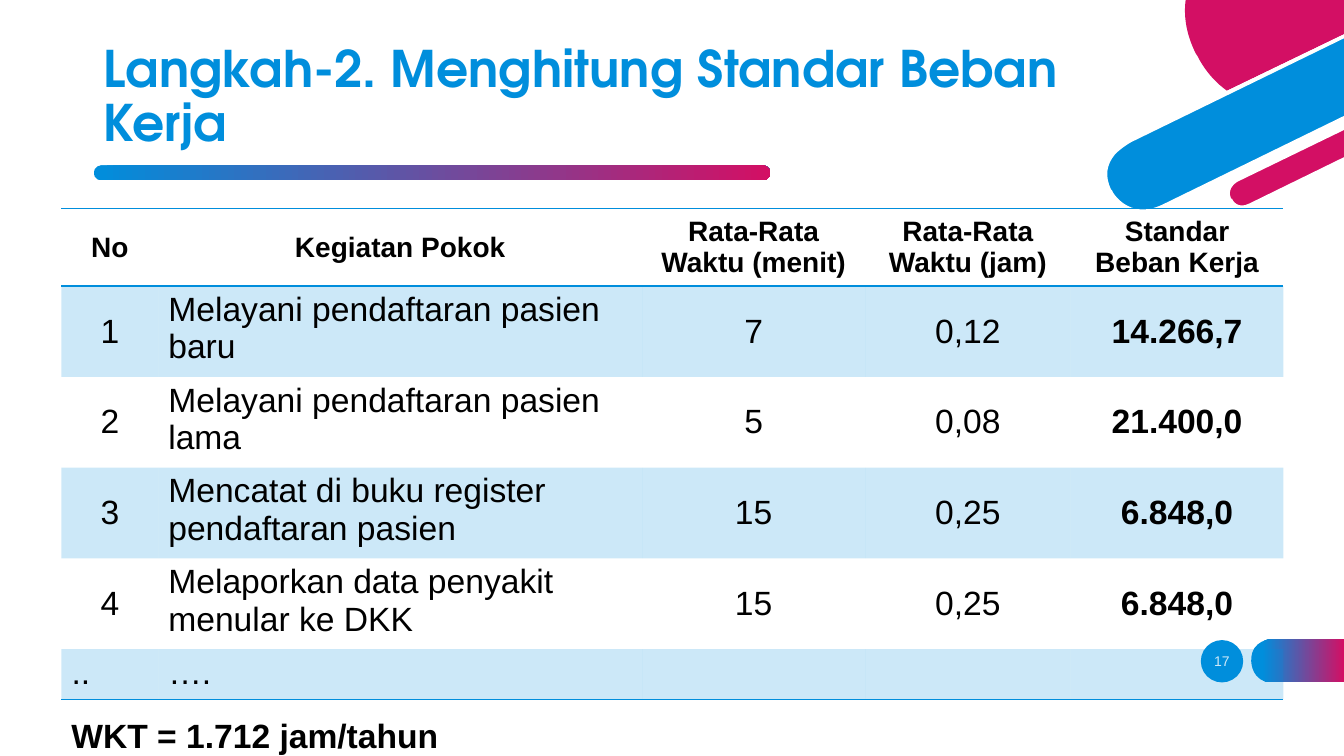
from lxml.etree import SubElement
from pptx import Presentation
from pptx.dml.color import RGBColor
from pptx.enum.shapes import MSO_SHAPE
from pptx.enum.text import MSO_ANCHOR, MSO_AUTO_SIZE, PP_ALIGN
from pptx.oxml import parse_xml
from pptx.oxml.ns import nsdecls, qn
from pptx.util import Inches, Pt

BLUE, PINK, WHITE, BLACK = "008EDC", "D30F64", "FFFFFF", "000000"
NO_STYLE = "{2D5ABB26-0587-4C30-8999-92F81FD0307C}"
UNITS = 1000  # outline units per inch

# Corner ribbons: a pair is a straight step, six numbers are a Bézier step
RIBBONS = [
    (WHITE, [(13.33, 0.81), (13.06, 0.94), (12.74, 1.1, 12.44, 1.08, 12.19, 0.89),
             (11.99, 0.74, 11.89, 0.55, 11.89, 0.55), (11.88, 0.52),
             (11.79, 0.34, 11.75, 0.16, 11.78, 0), (11.74, 0),
             (11.71, 0.17, 11.75, 0.35, 11.84, 0.54), (11.86, 0.57),
             (11.86, 0.58, 11.96, 0.77, 12.16, 0.92),
             (12.28, 1.01, 12.44, 1.09, 12.65, 1.09),
             (12.77, 1.09, 12.91, 1.06, 13.08, 0.98), (13.33, 0.86)]),
    (BLUE, [(11.21, 1.39), (11.21, 1.39, 10.85, 1.57, 11.01, 1.89), (11.01, 1.9),
            (11.01, 1.9, 11.17, 2.22, 11.54, 2.04), (13.33, 1.17), (13.33, 0.36)]),
    (PINK, [(11.88, 0.56), (11.88, 0.56, 11.97, 0.76, 12.17, 0.9), (13.33, 0.34),
            (13.33, 0), (11.76, 0), (11.74, 0.15, 11.76, 0.33, 11.86, 0.53)]),
    (PINK, [(13.33, 1.26), (12.27, 1.78), (12.27, 1.78, 12.13, 1.85, 12.2, 1.97),
            (12.2, 1.98), (12.2, 1.98, 12.26, 2.11, 12.4, 2.04), (13.33, 1.58)]),
    (WHITE, [(12.39, 2.02), (12.27, 2.08, 12.22, 1.98, 12.22, 1.97), (12.21, 1.97),
             (12.16, 1.86, 12.28, 1.8, 12.28, 1.8), (13.33, 1.29), (13.33, 1.24),
             (12.26, 1.76), (12.26, 1.76, 12.19, 1.8, 12.17, 1.87),
             (12.15, 1.91, 12.16, 1.95, 12.18, 1.99),
             (12.2, 2.03, 12.25, 2.08, 12.32, 2.08),
             (12.35, 2.08, 12.38, 2.08, 12.41, 2.06), (13.33, 1.61), (13.33, 1.56)]),
    (WHITE, [(11.53, 2.03), (11.19, 2.19, 11.03, 1.9, 11.03, 1.89), (11.02, 1.88),
             (10.96, 1.75, 10.97, 1.64, 11.06, 1.53),
             (11.13, 1.46, 11.22, 1.41, 11.22, 1.41), (13.33, 0.38), (13.33, 0.34),
             (11.2, 1.37), (11.19, 1.38, 11.02, 1.46, 10.96, 1.63),
             (10.93, 1.71, 10.94, 1.8, 10.99, 1.9), (10.99, 1.91),
             (10.99, 1.91, 11.1, 2.12, 11.33, 2.12),
             (11.39, 2.12, 11.46, 2.1, 11.54, 2.06), (13.33, 1.19), (13.33, 1.15)]),
]
PAGE_TAB = [(12.62, 6.77), (13.33, 6.77), (13.33, 6.34), (12.62, 6.34),
            (12.62, 6.34, 12.41, 6.34, 12.41, 6.55), (12.41, 6.56),
            (12.41, 6.56, 12.41, 6.77, 12.62, 6.77)]

COLUMNS = [0.96, 4.8, 2.21, 2.04, 2.11]
ROW_HEIGHT = 0.41
ROWS = [
    ["No", "Kegiatan Pokok", "Rata-Rata Waktu (menit)", "Rata-Rata Waktu (jam)",
     "Standar Beban Kerja"],
    ["1", "Melayani pendaftaran pasien baru", "7", "0,12", "14.266,7"],
    ["2", "Melayani pendaftaran pasien lama", "5", "0,08", "21.400,0"],
    ["3", "Mencatat di buku register pendaftaran pasien", "15", "0,25", "6.848,0"],
    ["4", "Melaporkan data penyakit menular ke DKK", "15", "0,25", "6.848,0"],
    ["..", "….", "", "", ""],
]


def rgb(color):
    return RGBColor.from_string(color)


def set_gradient(fill, start=0):
    fill.gradient()
    fill.gradient_angle = 0
    for stop, color, position in zip(fill.gradient_stops, (BLUE, PINK), (start, 1)):
        stop.color.rgb = rgb(color)
        stop.position = position


def paint(sp, color=None, start=0):
    """Fill with a colour, or with the blue-to-pink gradient if none is given."""
    sp.shadow.inherit = False
    sp.line.fill.background()
    if color:
        sp.fill.solid()
        sp.fill.fore_color.rgb = rgb(color)
    else:
        set_gradient(sp.fill, start)


def write(tf, text, color=BLACK, align=PP_ALIGN.LEFT, **font):
    p = tf.paragraphs[0]
    p.alignment = align
    r = p.add_run()
    r.text = text
    for name, value in {"name": "Arial", "bold": False, **font}.items():
        setattr(r.font, name, value)
    if color:
        r.font.color.rgb = rgb(color)
    return r


def add_text(s, box, text, anchor=MSO_ANCHOR.TOP, **format_values):
    tf = s.shapes.add_textbox(*map(Inches, box)).text_frame
    tf.word_wrap = True
    tf.vertical_anchor = anchor
    write(tf, text, **format_values)


def add_outline(s, steps, color=None, start=0):
    ends = [tuple(round(v * UNITS) for v in step[-2:]) for step in steps]
    left, top = (min(values) for values in zip(*ends))
    builder = s.shapes.build_freeform(*ends[0], scale=Inches(1) / UNITS)
    builder.add_line_segments(ends[1:], close=True)
    sp = builder.convert_to_shape()
    # Turn the straight segments of Bézier steps into curves
    segments = list(sp._element.iter(qn("a:lnTo")))
    for segment, step in zip(segments, steps[1:]):
        if len(step) == 6:
            segment.tag = qn("a:cubicBezTo")
            for i, (x, y) in enumerate((step[:2], step[2:4])):
                segment.insert(i, parse_xml(
                    f'<a:pt {nsdecls("a")} x="{round(x * UNITS) - left}"'
                    f' y="{round(y * UNITS) - top}"/>'))
    paint(sp, color, start)


def add_preset(s, shape_type, box, color=None):
    sp = s.shapes.add_shape(shape_type, *map(Inches, box))
    paint(sp, color)
    return sp


def add_title(s, text):
    title = s.shapes.title
    title.left, title.top, title.width, title.height = map(
        Inches, (0.93, 0.46, 9.9, 1.03))
    tf = title.text_frame
    tf.auto_size = MSO_AUTO_SIZE.NONE
    tf.vertical_anchor = MSO_ANCHOR.MIDDLE
    r = write(tf, text, None, name="TeX Gyre Adventor", size=Pt(36), bold=True)
    tf.paragraphs[0].line_spacing = 0.9
    set_gradient(r.font.fill)


def add_border(cell, side):
    cell._tc.get_or_add_tcPr().insert(0, parse_xml(
        f'<a:{side} {nsdecls("a")} w="12700"><a:solidFill><a:srgbClr val="{BLUE}"/>'
        f'</a:solidFill></a:{side}>'))


def tint(cell):
    cell.fill.solid()
    cell.fill.fore_color.rgb = rgb(BLUE)
    color = cell._tc.tcPr.find(".//" + qn("a:srgbClr"))
    SubElement(color, qn("a:alpha"), val="20000")


def add_workload_table(s):
    last = len(ROWS) - 1
    frame = s.shapes.add_table(len(ROWS), len(COLUMNS), *map(
        Inches, (0.61, 2.07, sum(COLUMNS), 4.87)))
    table = frame.table
    table.first_row = table.horz_banding = False
    table._tbl.tblPr.find(qn("a:tableStyleId")).text = NO_STYLE
    for column, width in zip(table.columns, COLUMNS):
        column.width = Inches(width)
    for i, row in enumerate(ROWS):
        table.rows[i].height = Inches(ROW_HEIGHT)  # rows grow with their text
        for j, text in enumerate(row):
            cell = table.cell(i, j)
            centred = i == 0 or (j != 1 and i != last)
            if centred:
                cell.vertical_anchor = MSO_ANCHOR.MIDDLE
            if text:
                write(cell.text_frame, text, size=Pt(24 if i else 20),
                      bold=i == 0 or j == 4,
                      align=PP_ALIGN.CENTER if centred else PP_ALIGN.LEFT)
            if i % 2:
                tint(cell)
            else:
                cell.fill.background()
            if i in (0, last):
                add_border(cell, "lnB")
            if i == 0:
                add_border(cell, "lnT")
    frame.height = Inches(4.87)


def main():
    prs = Presentation()
    prs.slide_width, prs.slide_height = Inches(13.33), Inches(7.5)
    s = prs.slides.add_slide(prs.slide_layouts[5])

    # Decoration
    add_preset(s, MSO_SHAPE.OVAL, (11.91, 6.35, 0.42, 0.42), BLUE)
    add_outline(s, PAGE_TAB, start=0.12)
    for color, steps in RIBBONS:
        add_outline(s, steps, color)
    bar = add_preset(s, MSO_SHAPE.ROUNDED_RECTANGLE, (0.93, 1.64, 6.71, 0.15))
    bar.adjustments[0] = 0.5

    # Content
    add_title(s, "Langkah-2. Menghitung Standar Beban Kerja")
    add_text(s, (11.82, 6.36, 0.6, 0.4), "17", MSO_ANCHOR.MIDDLE, color=WHITE,
             align=PP_ALIGN.CENTER, size=Pt(10))
    add_workload_table(s)
    add_text(s, (0.61, 7.04, 4.83, 0.5), "WKT = 1.712 jam/tahun", size=Pt(24), bold=True)

    prs.save("out.pptx")


if __name__ == "__main__":
    main()
